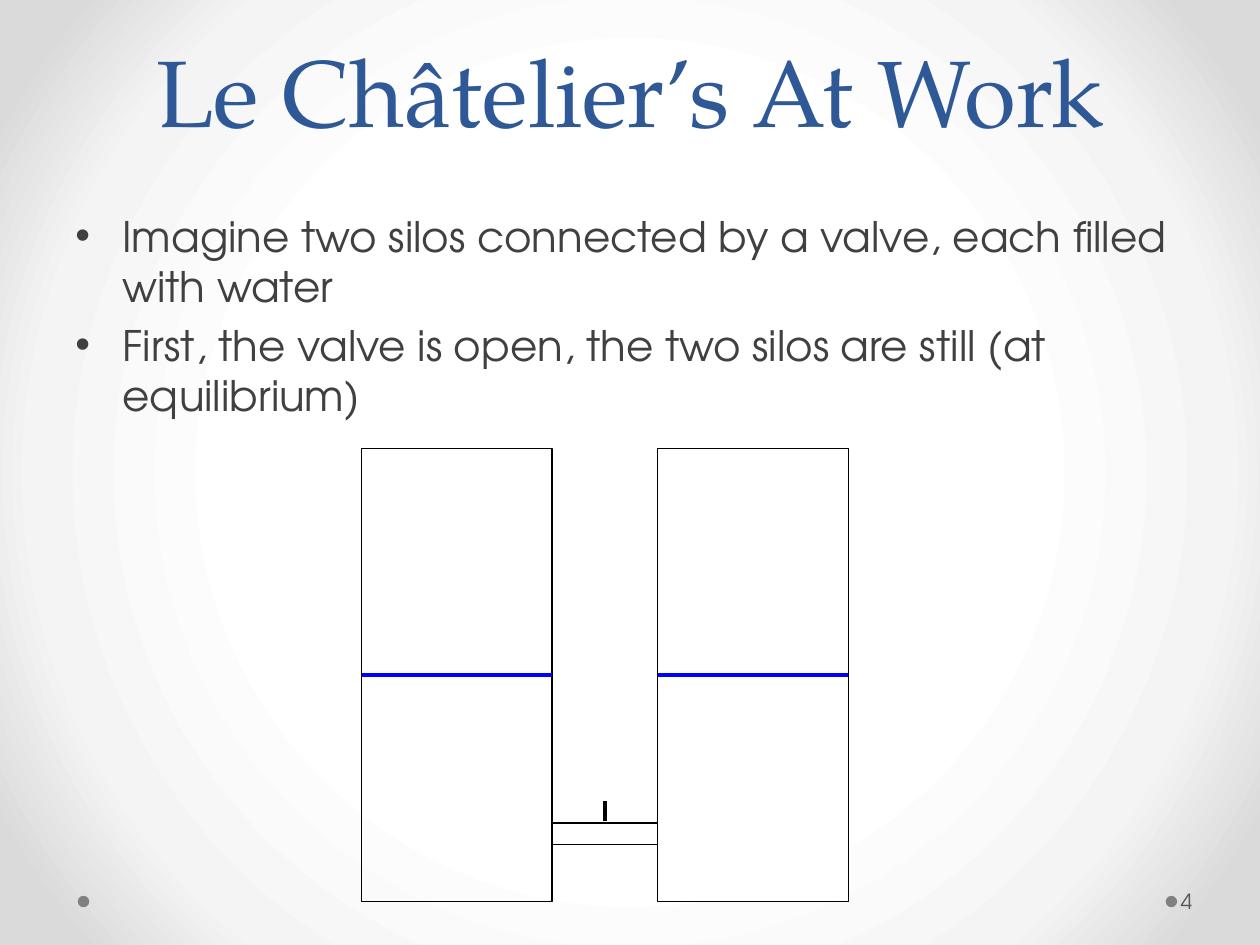
from dataclasses import dataclass

from lxml.etree import SubElement
from pptx import Presentation
from pptx.dml.color import RGBColor
from pptx.enum.shapes import MSO_CONNECTOR, MSO_SHAPE
from pptx.enum.text import MSO_ANCHOR, PP_ALIGN
from pptx.oxml.ns import qn
from pptx.util import Cm, Pt


@dataclass(frozen=True)
class Theme:
    heading_font: str = "TeX Gyre Pagella"
    body_font: str = "TeX Gyre Adventor"
    title_size: float = 54
    body_size: float = 24
    number_size: float = 12
    thin_line: float = 0.75
    thick_line: float = 2.25
    title_color: str = "2F5897"
    body_color: str = "404040"
    number_color: str = "595959"
    dot_color: str = "808080"
    outline_color: str = "000000"
    water_color: str = "0000FF"
    vessel_color: str = "FFFFFF"
    background_stops: tuple = ((50, "FFFFFF"), (76, "F4F4F4"), (92, "DADADA"))


def apply_format(target, values):
    for name, value in values.items():
        setattr(target, name, value)


class SlideBuilder:
    def __init__(self, slide, theme):
        self.slide = slide
        self.theme = theme

    def background(self):
        """Fill the slide with a circular gradient spreading from its centre."""
        self.slide.background.fill.gradient()
        gradient = self.slide.element.find(".//" + qn("a:gradFill"))
        for child in list(gradient):
            gradient.remove(child)
        stops = SubElement(gradient, qn("a:gsLst"))
        for percent, color in self.theme.background_stops:
            stop = SubElement(stops, qn("a:gs"), pos=str(percent * 1000))
            SubElement(stop, qn("a:srgbClr"), val=color)
        circle = SubElement(gradient, qn("a:path"), path="circle")
        SubElement(circle, qn("a:fillToRect"), l="50000", t="50000", r="50000", b="50000")

    def shape(self, kind, box, fill=None, outline=None):
        shape = self.slide.shapes.add_shape(kind, *map(Cm, box))
        shape.shadow.inherit = False
        if fill:
            shape.fill.solid()
            shape.fill.fore_color.rgb = RGBColor.from_string(fill)
        else:
            shape.fill.background()
        if outline:
            shape.line.color.rgb = RGBColor.from_string(outline)
            shape.line.width = Pt(self.theme.thin_line)
        else:
            shape.line.fill.background()

    def line(self, start, end, color):
        connector = self.slide.shapes.add_connector(
            MSO_CONNECTOR.STRAIGHT, *map(Cm, start + end))
        connector.line.color.rgb = RGBColor.from_string(color)
        connector.line.width = Pt(self.theme.thick_line)
        SubElement(connector.element.spPr, qn("a:effectLst"))

    def text(self, box, lines, font, size, color, frame=None, paragraph_format=None, bullet=None):
        text_frame = self.slide.shapes.add_textbox(*map(Cm, box)).text_frame
        apply_format(text_frame, {"word_wrap": True, **(frame or {})})
        text_frame.text = "\n".join(lines)
        for paragraph in text_frame.paragraphs:
            apply_format(paragraph, paragraph_format or {})
            run_font = paragraph.runs[0].font
            apply_format(run_font, {"name": font, "size": Pt(size)})
            run_font.color.rgb = RGBColor.from_string(color)
            if bullet:
                self.bullet(paragraph, bullet)

    def bullet(self, paragraph, character, indent=Cm(0.95)):
        properties = paragraph._p.get_or_add_pPr()
        properties.set("marL", str(indent))
        properties.set("indent", str(-indent))
        SubElement(properties, qn("a:buFont"), typeface="Arial")
        SubElement(properties, qn("a:buChar"), char=character)


def draw_silos(builder):
    """Draw two half-filled silos joined by a pipe with an open valve."""
    theme = builder.theme
    left, top, width, height = 7.29, 9.04, 3.84, 9.14
    gap, water_level = 2.13, 13.6
    pipe_left, pipe_top, pipe_height = left + width, 16.59, 0.43
    silos = ((left, None), (pipe_left + gap, theme.vessel_color))

    valve = pipe_left + gap / 2
    builder.line((valve, 16.15), (valve, 16.56), theme.outline_color)
    for silo_left, fill in silos:
        builder.shape(MSO_SHAPE.RECTANGLE, (silo_left, top, width, height),
                      fill, theme.outline_color)
    builder.shape(MSO_SHAPE.RECTANGLE, (pipe_left, pipe_top, gap, pipe_height),
                  theme.vessel_color, theme.outline_color)
    for silo_left, _ in silos:
        builder.line((silo_left, water_level), (silo_left + width, water_level),
                     theme.water_color)


def main():
    presentation = Presentation()
    apply_format(presentation, {"slide_width": Cm(25.4), "slide_height": Cm(19.05)})
    theme = Theme()
    builder = SlideBuilder(presentation.slides.add_slide(presentation.slide_layouts[6]), theme)

    builder.background()
    for dot_left in (23.5, 1.57):
        builder.shape(MSO_SHAPE.OVAL, (dot_left, 18.06, 0.23, 0.23), theme.dot_color)
    builder.text((1.27, 0, 22.86, 3.07), ["Le Châtelier’s At Work"],
                 theme.heading_font, theme.title_size, theme.title_color,
                 {"vertical_anchor": MSO_ANCHOR.BOTTOM},
                 {"alignment": PP_ALIGN.CENTER, "line_spacing": Pt(58)})
    builder.text((1.27, 4.11, 22.86, 12.57),
                 ["Imagine two silos connected by a valve, each filled with water",
                  "First, the valve is open, the two silos are still (at equilibrium)"],
                 theme.body_font, theme.body_size, theme.body_color,
                 paragraph_format={"space_before": Pt(4.8)}, bullet="•")
    draw_silos(builder)
    builder.text((23.72, 17.65, 1.55, 1.02), ["4"],
                 theme.body_font, theme.number_size, theme.number_color,
                 {"vertical_anchor": MSO_ANCHOR.MIDDLE,
                  "margin_left": Cm(0.08), "margin_right": Cm(0.13)})

    presentation.save("out.pptx")


if __name__ == "__main__":
    main()
